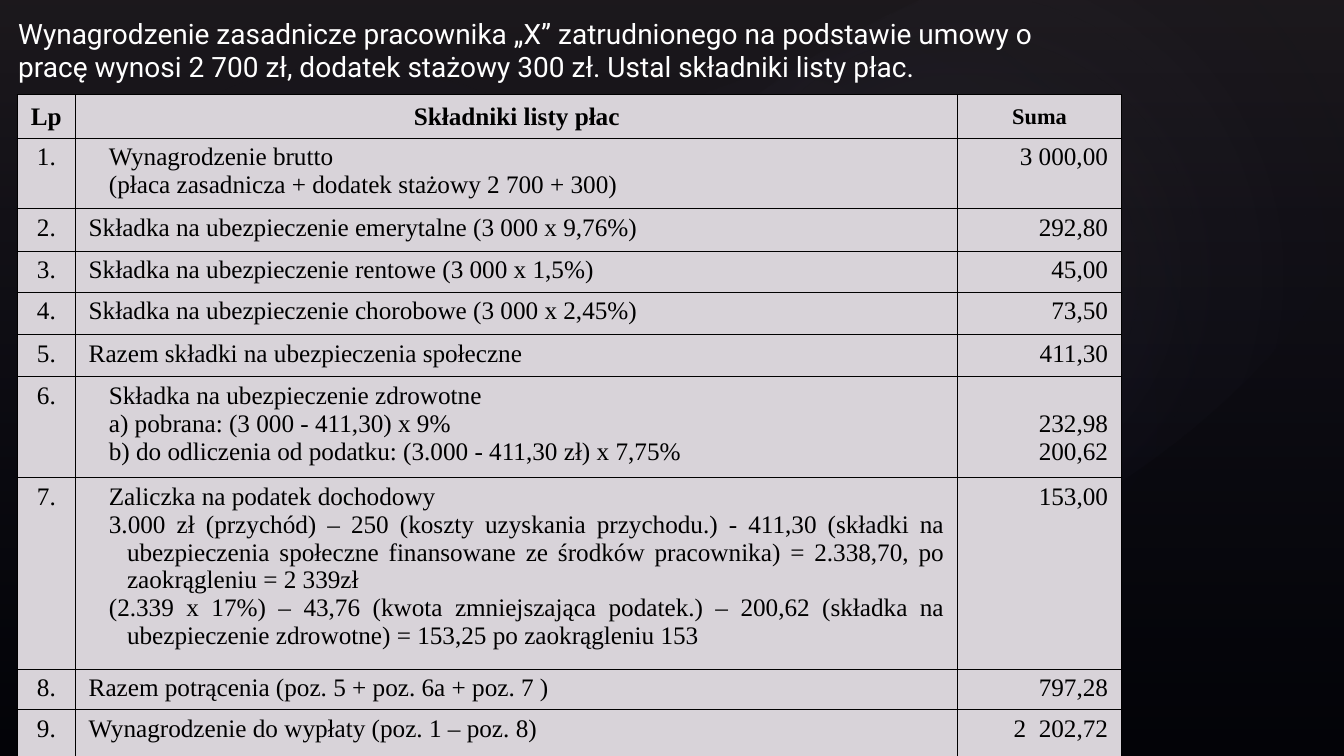
from lxml import etree
from pptx import Presentation
from pptx import util as u
from pptx.dml.color import RGBColor
from pptx.enum import shapes, text
from pptx.oxml import ns

COLORS = {
    "backdrop": "000000", "veil_top": "504652", "veil_bottom": "242852",
    "glow": "C4BCC6", "cell": "D8D3D9", "ink": "000000", "title": "FFFFFF",
}
TITLE = ("Wynagrodzenie zasadnicze pracownika „X” zatrudnionego na podstawie umowy o "
         "pracę wynosi 2 700 zł, dodatek stażowy 300 zł. Ustal składniki listy płac.")
HEADINGS = [("Lp", 18), ("Składniki listy płac", 18), ("Suma", 16)]
PAYROLL = [
    (["Wynagrodzenie brutto",
      "(płaca zasadnicza + dodatek stażowy 2 700 + 300)"], ["3 000,00"]),
    (["Składka na ubezpieczenie emerytalne (3 000 x 9,76%)"], ["292,80"]),
    (["Składka na ubezpieczenie rentowe (3 000 x 1,5%)"], ["45,00"]),
    (["Składka na ubezpieczenie chorobowe (3 000 x 2,45%)"], ["73,50"]),
    (["Razem składki na ubezpieczenia społeczne"], ["411,30"]),
    (["Składka na ubezpieczenie zdrowotne",
      "a) pobrana: (3 000 - 411,30) x 9%",
      "b) do odliczenia od podatku: (3.000 - 411,30 zł) x 7,75%"], ["232,98", "200,62"]),
    (["Zaliczka na podatek dochodowy",
      "3.000 zł (przychód) – 250 (koszty uzyskania przychodu.) - 411,30 (składki na "
      "ubezpieczenia społeczne finansowane ze środków pracownika) = 2.338,70, po "
      "zaokrągleniu = 2 339zł",
      "(2.339 x 17%) – 43,76 (kwota zmniejszająca podatek.) – 200,62 (składka na "
      "ubezpieczenie zdrowotne) = 153,25 po zaokrągleniu 153"], ["153,00"]),
    (["Razem potrącenia (poz. 5 + poz. 6a + poz. 7 )"], ["797,28"]),
    (["Wynagrodzenie do wypłaty (poz. 1 – poz. 8)"], ["2  202,72"]),
]
COLUMN_WIDTHS = [0.58, 8.75, 1.62]
ROW_HEIGHTS = [0.43, 0.7, 0.42, 0.41, 0.42, 0.42, 1, 1.9, 0.4, 0.49]
GLOWS = [
    ((2, 1.14, 10.56, 6.24), 328.7, 7),
    ((0.61, 0.46, 6.06, 6.53), 294.3, 8),
    ((4.78, 0.13, 9.45, 5.2), 328.7, 8),
]
CELL_FORMAT = {
    "margin_left": u.Inches(0.13), "margin_right": u.Inches(0.13),
    "margin_top": u.Inches(0.05), "margin_bottom": u.Inches(0.05),
}
TITLE_FORMAT = {
    "left": u.Inches(0.08), "top": u.Inches(0.11),
    "width": u.Inches(10.85), "height": u.Inches(0.77),
}
TITLE_FRAME = {
    "word_wrap": True, "auto_size": text.MSO_AUTO_SIZE.NONE,
    "vertical_anchor": text.MSO_ANCHOR.TOP,
}


def apply(target, formats):
    for name, value in formats.items():
        setattr(target, name, value)


def rgb(name):
    return RGBColor.from_string(COLORS[name])


def style_font(font, name, size, color, bold=False):
    apply(font, {"name": name, "size": u.Pt(size), "bold": bold})
    font.color.rgb = rgb(color)


def add_gradient_shape(slide, preset, box, stops, radial, rotation=0):
    area = slide.shapes.add_shape(preset, *map(u.Inches, box))
    area.rotation = rotation
    area.shadow.inherit = False
    area.line.fill.background()
    area.fill.background()
    gradient = etree.Element(ns.qn("a:gradFill"), rotWithShape="1")
    stop_list = etree.SubElement(gradient, ns.qn("a:gsLst"))
    for position, color, opacity in stops:
        stop = etree.SubElement(stop_list, ns.qn("a:gs"), pos=str(position * 1000))
        tint = etree.SubElement(stop, ns.qn("a:srgbClr"), val=COLORS[color])
        etree.SubElement(tint, ns.qn("a:alpha"), val=str(opacity * 1000))
    if radial:
        center = etree.SubElement(gradient, ns.qn("a:path"), path="circle")
        etree.SubElement(center, ns.qn("a:fillToRect"), dict.fromkeys("ltrb", "50000"))
    else:
        etree.SubElement(gradient, ns.qn("a:lin"), ang="5400000", scaled="0")
    properties = area._element.spPr
    properties.replace(properties.find(ns.qn("a:noFill")), gradient)


def add_backdrop(slide):
    slide.background.fill.solid()
    slide.background.fill.fore_color.rgb = rgb("backdrop")
    add_gradient_shape(slide, shapes.MSO_SHAPE.RECTANGLE, (0, 0, 13.33, 7.5),
                       [(0, "veil_top", 36), (100, "veil_bottom", 10)], False)
    for box, rotation, opacity in GLOWS:
        add_gradient_shape(slide, shapes.MSO_SHAPE.OVAL, box,
                           [(0, "glow", opacity), (58, "veil_bottom", 0)], True, rotation)


def set_title(slide):
    title = slide.shapes.title
    slide.shapes._spTree.append(title._element)
    apply(title, TITLE_FORMAT)
    frame = title.text_frame
    apply(frame, TITLE_FRAME)
    frame.text = TITLE
    frame.paragraphs[0].alignment = text.PP_ALIGN.LEFT
    style_font(frame.paragraphs[0].runs[0].font, "Roboto", 20, "title")


def set_borders(cell, top, bottom):
    properties = cell._tc.get_or_add_tcPr()
    for index, (side, width) in enumerate([("L", 1), ("R", 1), ("T", top), ("B", bottom)]):
        border = etree.Element(ns.qn(f"a:ln{side}"), w=str(u.Pt(width)))
        fill = etree.SubElement(border, ns.qn("a:solidFill"))
        etree.SubElement(fill, ns.qn("a:srgbClr"), val=COLORS["ink"])
        properties.insert(index, border)


def fill_cell(cell, lines, alignment, hanging=0.38, size=18, bold=False):
    apply(cell, CELL_FORMAT)
    cell.fill.solid()
    cell.fill.fore_color.rgb = rgb("cell")
    cell.text_frame.text = "\n".join(lines)
    for paragraph in cell.text_frame.paragraphs:
        paragraph.alignment = alignment
        indents = paragraph._p.get_or_add_pPr()
        indents.set("marL", str(u.Inches(0.38)))
        indents.set("indent", str(-u.Inches(hanging)))
        style_font(paragraph.runs[0].font, "Times New Roman", size, "ink", bold)


def add_payroll(slide):
    frame = slide.shapes.add_table(len(ROW_HEIGHTS), len(COLUMN_WIDTHS), u.Inches(0.17),
                                   u.Inches(0.94), u.Inches(sum(COLUMN_WIDTHS)),
                                   u.Inches(sum(ROW_HEIGHTS)))
    payroll = frame.table
    for column, width in zip(payroll.columns, COLUMN_WIDTHS):
        column.width = u.Inches(width)
    for row, height in zip(payroll.rows, ROW_HEIGHTS):
        row.height = u.Inches(height)
    for column, (heading, size) in enumerate(HEADINGS):
        cell = payroll.cell(0, column)
        fill_cell(cell, [heading], text.PP_ALIGN.CENTER, size=size, bold=True)
        cell.vertical_anchor = text.MSO_ANCHOR.MIDDLE
    for number, (component, amounts) in enumerate(PAYROLL, 1):
        hanging = 0.18 if len(component) > 1 else 0.38
        fill_cell(payroll.cell(number, 0), [f"{number}."], text.PP_ALIGN.CENTER)
        fill_cell(payroll.cell(number, 1), component, text.PP_ALIGN.JUSTIFY, hanging)
        total = payroll.cell(number, 2)
        fill_cell(total, amounts, text.PP_ALIGN.RIGHT, hanging)
        if len(amounts) > 1:
            apply(total, {"vertical_anchor": text.MSO_ANCHOR.BOTTOM,
                          "margin_bottom": u.Inches(0.12)})
    last = len(PAYROLL)
    for number, row in enumerate(payroll.rows):
        for cell in row.cells:
            set_borders(cell, 1 if number < 2 else 0.75, 1 if number in (0, last) else 0.75)


def main():
    deck = Presentation()
    apply(deck, {"slide_width": u.Inches(13.33), "slide_height": u.Inches(7.5)})
    slide = deck.slides.add_slide(deck.slide_layouts[5])
    add_backdrop(slide)
    add_payroll(slide)
    set_title(slide)
    deck.save("out.pptx")


if __name__ == "__main__":
    main()
